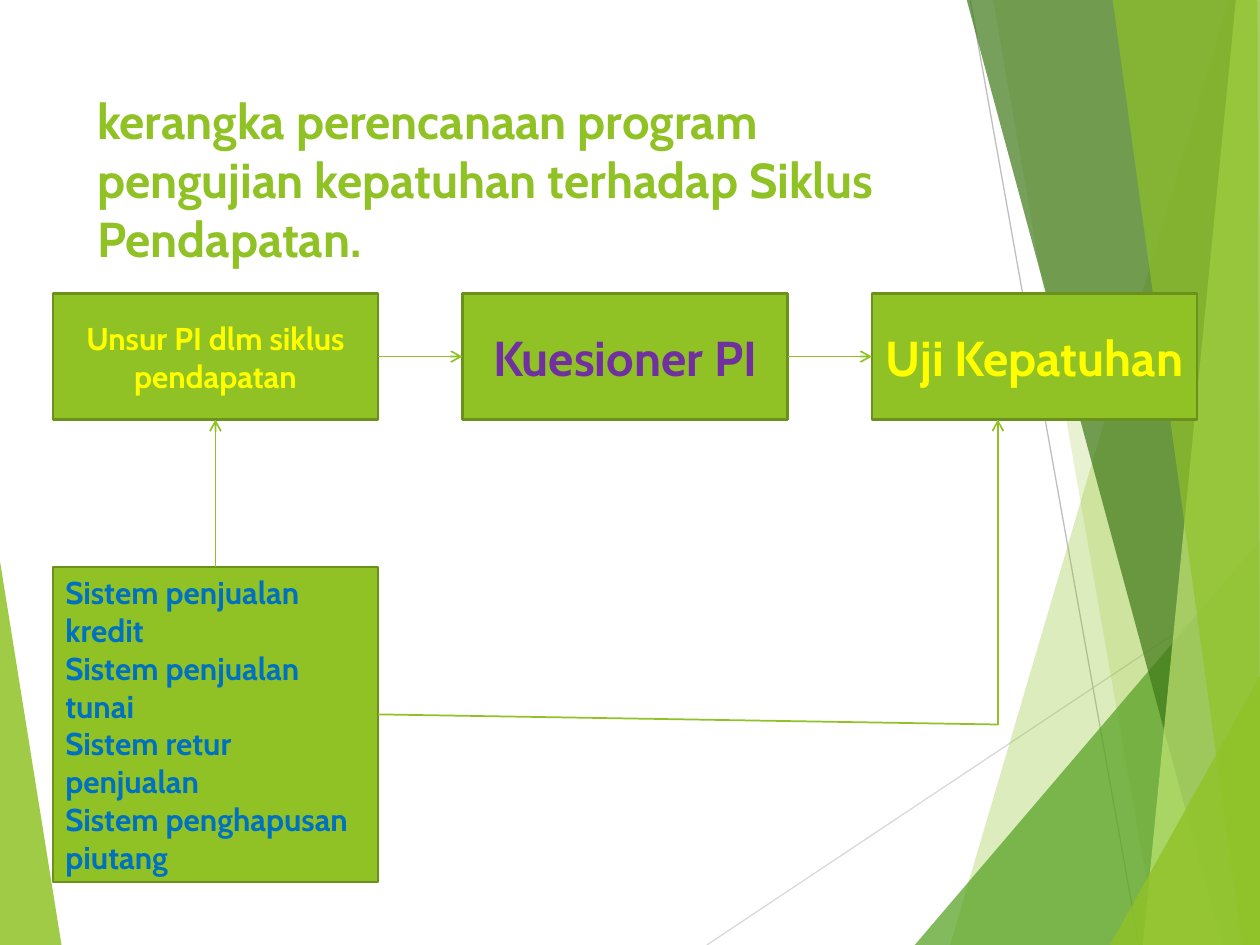
from typing import NamedTuple

from lxml.etree import SubElement
from pptx import Presentation
from pptx.dml.color import RGBColor
from pptx.enum.shapes import MSO_CONNECTOR, MSO_SHAPE
from pptx.enum.text import MSO_ANCHOR, PP_ALIGN
from pptx.oxml.ns import qn
from pptx.util import Inches, Pt

FONT = "Cabin"
GREEN = "90C226"
DARK_GREEN = "6B901C"
YELLOW = "FFFF00"
TOP, BOTTOM, RIGHT = -0.01, 7.5, 10.01
BOX_WIDTH, BOX_HEIGHT = 2.58, 1
FIRST_LEFT, COLUMN_STEP = 0.42, 3.25
ROW_TOP = 2.33

Point = tuple[float, float]


class Facet(NamedTuple):
    points: list[Point]
    color: str
    opacity: int


class Ray(NamedTuple):
    start: Point
    end: Point
    color: str


class Step(NamedTuple):
    column: int
    top: float
    height: float
    lines: list[str]
    size: int
    color: str
    align: PP_ALIGN = PP_ALIGN.CENTER


LEFT_FACET = Facet([(-0.01, 4.39), (0.49, 7.51), (-0.01, BOTTOM)], GREEN, 85)
RAYS = [
    Ray((5.61, BOTTOM), (RIGHT, 4.57), "D9D9D9"),
    Ray((7.7, 0), (9.04, BOTTOM), "BFBFBF"),
]
RIGHT_FACETS = [
    Facet([(9.75, 0), (7.54, BOTTOM), (10.02, 7.51), (RIGHT, 0.01)], GREEN, 30),
    Facet([(7.88, TOP), (9.19, BOTTOM), (RIGHT, BOTTOM), (RIGHT, TOP)], GREEN, 20),
    Facet([(7.26, BOTTOM), (10, 4.29), (RIGHT, BOTTOM)], "54A021", 72),
    Facet([(7.67, TOP), (9.7, BOTTOM), (RIGHT, BOTTOM), (RIGHT, TOP)], "3F7819", 70),
    Facet([(9.81, TOP), (9.07, BOTTOM), (RIGHT, BOTTOM), (10, TOP)], "C0E474", 70),
    Facet([(8.83, TOP), (9.86, BOTTOM), (10, BOTTOM), (9.98, TOP)], GREEN, 65),
    Facet([(8.81, BOTTOM), (RIGHT, 5.35), (RIGHT, BOTTOM)], GREEN, 80),
]
STEPS = [
    Step(0, ROW_TOP, BOX_HEIGHT, ["Unsur PI dlm siklus pendapatan"], 18, YELLOW),
    Step(1, ROW_TOP, BOX_HEIGHT, ["Kuesioner PI"], 28, "7030A0"),
    Step(2, ROW_TOP, BOX_HEIGHT, ["Uji Kepatuhan"], 28, YELLOW),
    Step(0, 4.5, 2.5, [
        "Sistem penjualan \tkredit",
        "Sistem penjualan \ttunai",
        "Sistem retur \tpenjualan",
        "Sistem penghapusan \tpiutang",
    ], 18, "0070C0", PP_ALIGN.LEFT),
]


def rgb(color: str) -> RGBColor:
    return RGBColor.from_string(color)


def add_facet(page, facet: Facet) -> None:
    """Draw a translucent polygon without an outline."""
    first, *others = [(Inches(x), Inches(y)) for x, y in facet.points]
    builder = page.shapes.build_freeform(*first, scale=1.0)
    builder.add_line_segments(others, close=True)
    shape = builder.convert_to_shape()
    shape.shadow.inherit = False
    shape.line.fill.background()
    shape.fill.solid()
    shape.fill.fore_color.rgb = rgb(facet.color)
    color = shape._element.spPr.find(f"{qn('a:solidFill')}/{qn('a:srgbClr')}")
    SubElement(color, qn("a:alpha"), val=str(facet.opacity * 1000))


def add_line(page, start: Point, end: Point, color: str = GREEN,
             width: float = 1, arrow: bool = False):
    ends = [Inches(value) for value in (*start, *end)]
    line = page.shapes.add_connector(MSO_CONNECTOR.STRAIGHT, *ends)
    line.line.color.rgb = rgb(color)
    line.line.width = Pt(width)
    if arrow:
        SubElement(line.line._get_or_add_ln(), qn("a:tailEnd"), type="arrow")
    SubElement(line._element.spPr, qn("a:effectLst"))
    return line


def add_span(para, text: str, size: int, color: str) -> None:
    span = para.add_run()
    span.text = text
    span.font.name = FONT
    span.font.size = Pt(size)
    span.font.bold = True
    span.font.color.rgb = rgb(color)


def add_step(page, step: Step):
    left = FIRST_LEFT + step.column * COLUMN_STEP
    box = page.shapes.add_shape(
        MSO_SHAPE.RECTANGLE, Inches(left), Inches(step.top),
        Inches(BOX_WIDTH), Inches(step.height))
    box.shadow.inherit = False
    box.fill.solid()
    box.fill.fore_color.rgb = rgb(GREEN)
    box.line.color.rgb = rgb(DARK_GREEN)
    box.line.width = Pt(1.5)
    frame = box.text_frame
    frame.word_wrap = True
    frame.vertical_anchor = MSO_ANCHOR.MIDDLE
    for index, text in enumerate(step.lines):
        para = frame.add_paragraph() if index else frame.paragraphs[0]
        para.alignment = step.align
        add_span(para, text, step.size, step.color)
    return box


def join(page, source, source_side: int, target, target_side: int) -> None:
    """Link two boxes with an arrow between the middles of their sides."""
    arrow = add_line(page, (0, 0), (1, 1), arrow=True)
    arrow.begin_connect(source, source_side)
    arrow.end_connect(target, target_side)


def add_title(page, text: str) -> None:
    title = page.shapes.title
    title.left, title.top = Inches(0.67), Inches(0.67)
    title.width, title.height = Inches(6.94), Inches(1.44)
    frame = title.text_frame
    frame.word_wrap = True
    frame.vertical_anchor = MSO_ANCHOR.TOP
    para = frame.paragraphs[0]
    para.alignment = PP_ALIGN.LEFT
    add_span(para, text, 28, GREEN)
    page.shapes._spTree.append(title._element)  # in front of the backdrop


def main() -> None:
    deck = Presentation()
    deck.slide_width, deck.slide_height = Inches(10), Inches(7.5)
    page = deck.slides.add_slide(deck.slide_layouts[5])

    add_facet(page, LEFT_FACET)
    for ray in RAYS:
        add_line(page, ray.start, ray.end, ray.color, 0.75)
    for facet in RIGHT_FACETS:
        add_facet(page, facet)

    add_title(page, "kerangka perencanaan program pengujian kepatuhan "
                    "terhadap Siklus Pendapatan.")
    elements, questionnaire, test, systems = [add_step(page, step) for step in STEPS]
    join(page, elements, 3, questionnaire, 1)
    join(page, questionnaire, 3, test, 1)
    join(page, systems, 0, elements, 2)
    corner = (7.92, 5.75)
    add_line(page, (FIRST_LEFT + BOX_WIDTH, 5.67), corner)
    add_line(page, corner, (corner[0], ROW_TOP + BOX_HEIGHT), arrow=True)

    deck.save("out.pptx")


if __name__ == "__main__":
    main()
